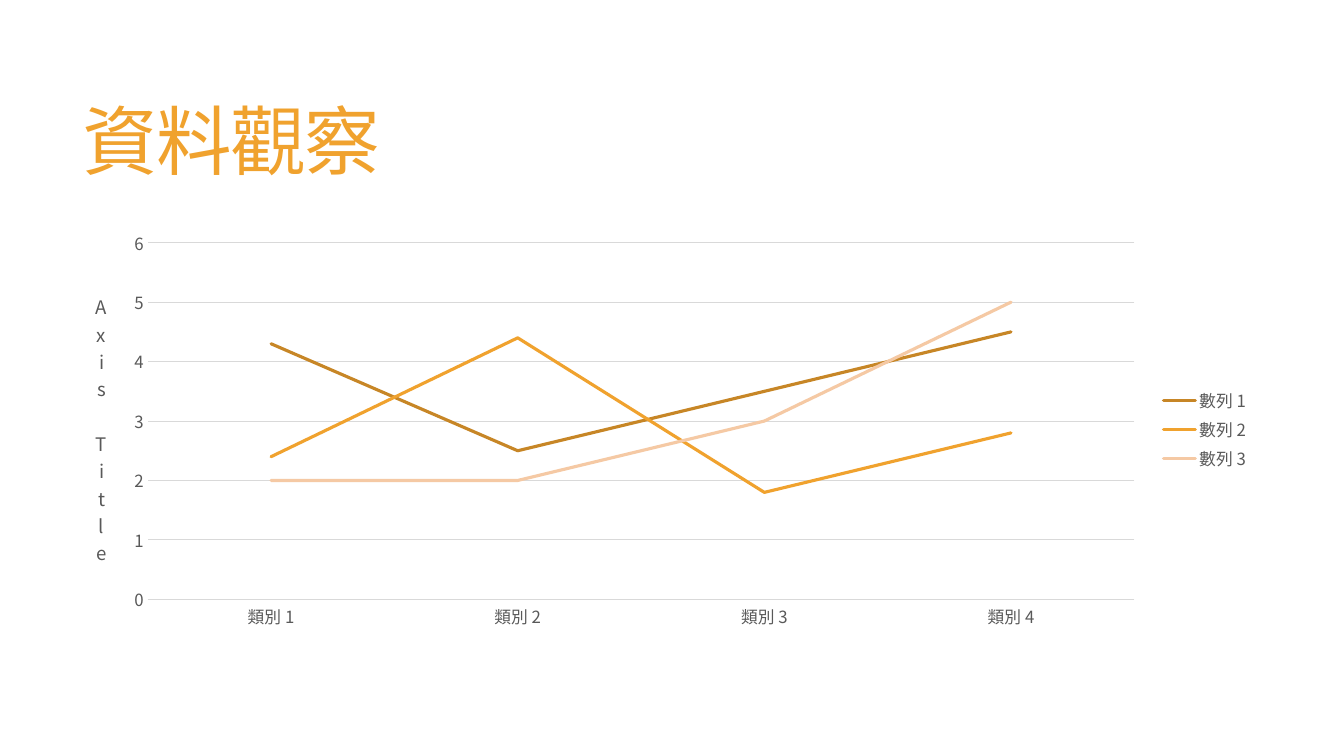
from lxml import etree
from pptx import Presentation
from pptx.chart.data import CategoryChartData
from pptx.dml.color import RGBColor
from pptx.enum.chart import XL_CHART_TYPE, XL_LEGEND_POSITION, XL_MARKER_STYLE, XL_TICK_MARK
from pptx.enum.text import MSO_ANCHOR
from pptx.oxml.ns import qn
from pptx.util import Cm, Pt

LINE_CHART = XL_CHART_TYPE.LINE
LEGEND_RIGHT = XL_LEGEND_POSITION.RIGHT
NO_MARKER = XL_MARKER_STYLE.NONE
NO_TICK = XL_TICK_MARK.NONE
MIDDLE = MSO_ANCHOR.MIDDLE

FONT = "Noto Sans CJK TC"
COLORS = {
    "title": "F0A22E",
    "label": "595959",
    "grid": "D9D9D9",
    "background": "FFFFFF",
}
CATEGORIES = ["類別 1", "類別 2", "類別 3", "類別 4"]
SERIES = [
    ("數列 1", "C78626", (4.3, 2.5, 3.5, 4.5)),
    ("數列 2", "F0A22E", (2.4, 4.4, 1.8, 2.8)),
    ("數列 3", "F5C9A4", (2, 2, 3, 5)),
]


def color(value):
    """Turn a hex string into a colour."""
    return RGBColor.from_string(value)


def style_font(font, size, name):
    """Set the size, colour and Latin and East Asian typeface of a font."""
    font.size = Pt(size)
    font.bold = False
    font.color.rgb = color(COLORS[name])
    font.name = FONT
    east_asian = etree.Element(qn("a:ea"), typeface=FONT)
    font._element.find(qn("a:latin")).addnext(east_asian)


def style_line(line, value, width):
    """Set the colour and width of a line."""
    line.color.rgb = color(value)
    line.width = Pt(width)


def add_title(page, left, top, width, height):
    """Place the slide title, centred vertically in its box."""
    box = page.shapes.add_textbox(left, top, width, height)
    frame = box.text_frame
    frame.word_wrap = True
    frame.vertical_anchor = MIDDLE
    para = frame.paragraphs[0]
    para.line_spacing = 0.85
    span = para.add_run()
    span.text = "資料觀察"
    style_font(span.font, 54, "title")
    span.font._element.set("spc", "-120")


def style_axes(chart):
    """Format both axes, the gridlines and the stacked axis title."""
    for axis in (chart.category_axis, chart.value_axis):
        axis.major_tick_mark = NO_TICK
        axis.minor_tick_mark = NO_TICK
        style_font(axis.tick_labels.font, 12, "label")
    style_line(chart.category_axis.format.line, COLORS["grid"], 0.75)

    values = chart.value_axis
    values.minimum_scale = 0
    values.maximum_scale = 6
    values.major_unit = 1
    values.format.line.fill.background()
    values.has_major_gridlines = True
    style_line(values.major_gridlines.format.line, COLORS["grid"], 0.75)
    frame = values.axis_title.text_frame
    span = frame.paragraphs[0].add_run()
    span.text = "Axis Title"
    style_font(span.font, 13.3, "label")
    direction = frame._txBody.find(qn("a:bodyPr"))
    direction.set("rot", "0")
    direction.set("vert", "wordArtVert")


def add_line_chart(page, left, top, width, height):
    """Place the line chart with its legend on the right."""
    data = CategoryChartData()
    data.categories = CATEGORIES
    for name, _, values in SERIES:
        data.add_series(name, values)
    chart = page.shapes.add_chart(LINE_CHART, left, top, width, height, data).chart
    chart.has_title = False
    chart.font.size = Pt(10)
    chart.font.name = FONT
    chart.has_legend = True
    chart.legend.position = LEGEND_RIGHT
    chart.legend.include_in_layout = False
    style_font(chart.legend.font, 12, "label")
    style_axes(chart)

    plot = chart.plots[0]
    plot.vary_by_categories = False
    for series, (_, value, _) in zip(plot.series, SERIES):
        series.smooth = False
        series.marker.style = NO_MARKER
        style_line(series.format.line, value, 2.25)
        series.format.line._ln.set("cap", "rnd")


def main():
    """Build the slide and save the deck."""
    deck = Presentation()
    deck.slide_width = Cm(33.87)
    deck.slide_height = Cm(19.05)
    page = deck.slides.add_slide(deck.slide_layouts[6])
    page.background.fill.solid()
    page.background.fill.fore_color.rgb = color(COLORS["background"])
    add_title(page, Cm(1.83), Cm(1.4), Cm(29.92), Cm(4.6))
    add_line_chart(page, Cm(1.88), Cm(5.59), Cm(29.87), Cm(10.46))
    deck.save("out.pptx")


if __name__ == "__main__":
    main()
